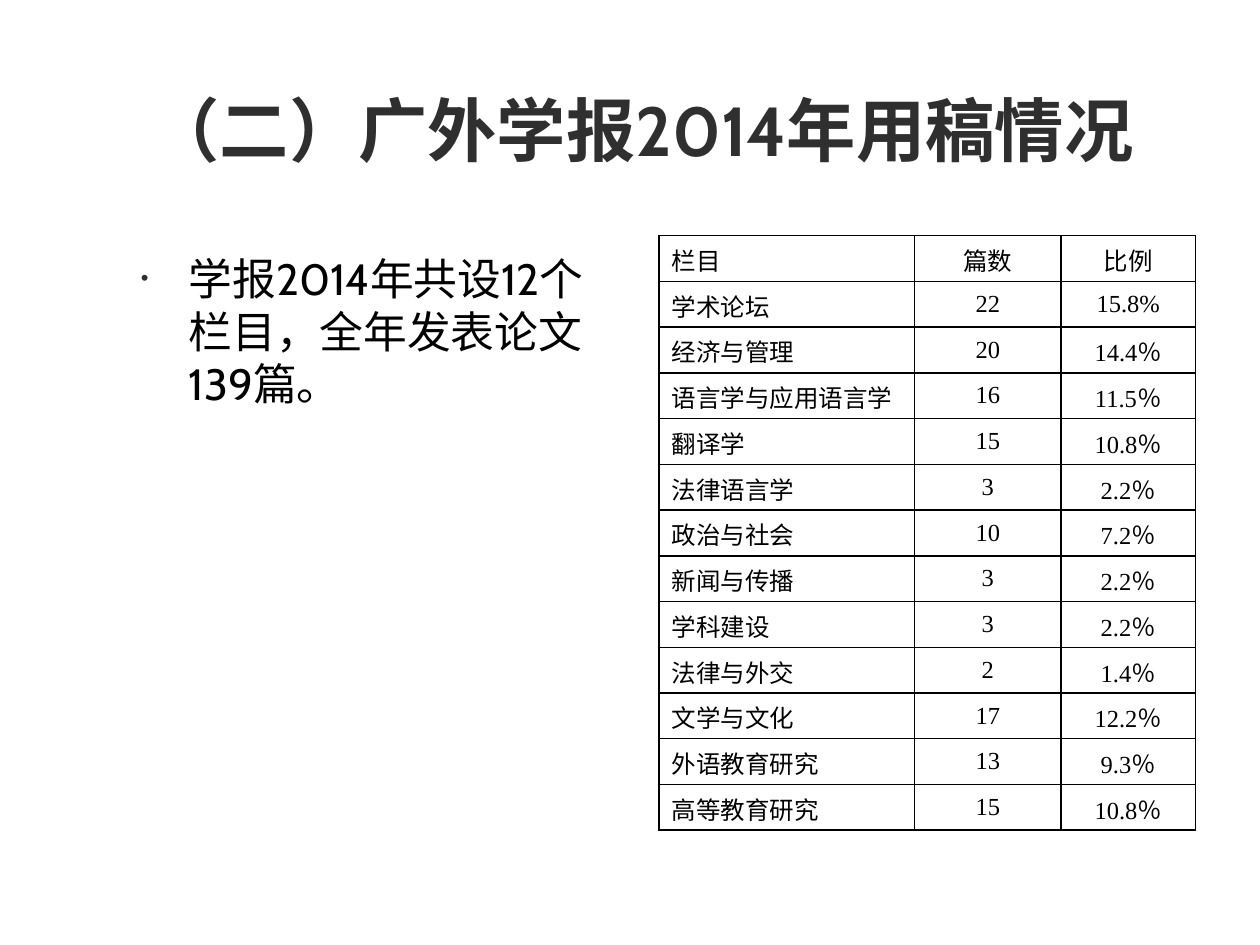
from dataclasses import dataclass

from lxml import etree
from pptx import Presentation
from pptx.dml.color import RGBColor
from pptx.enum.text import MSO_ANCHOR, PP_ALIGN
from pptx.oxml.ns import qn
from pptx.util import Inches, Pt

LEFT, CENTER = PP_ALIGN.LEFT, PP_ALIGN.CENTER
MIDDLE = MSO_ANCHOR.MIDDLE
COLORS = {"title": "2F2F2F", "text": "000000", "line": "000000"}
HANG = Inches(0.38)


@dataclass
class Style:
    size: float
    font: str
    color: str
    bold: bool = False


@dataclass
class Entry:
    name: str
    count: str
    share: str


TITLE = Style(39.6, "Cabin", "title", True)
BODY = Style(25, "Cabin", "text")
CELL = Style(14, "Times New Roman", "text")

ENTRIES = [
    Entry("栏目", "篇数", "比例"),
    Entry("学术论坛", "22", "15.8%"),
    Entry("经济与管理", "20", "14.4％"),
    Entry("语言学与应用语言学", "16", "11.5％"),
    Entry("翻译学", "15", "10.8％"),
    Entry("法律语言学", "3", "2.2％"),
    Entry("政治与社会", "10", "7.2％"),
    Entry("新闻与传播", "3", "2.2％"),
    Entry("学科建设", "3", "2.2％"),
    Entry("法律与外交", "2", "1.4％"),
    Entry("文学与文化", "17", "12.2％"),
    Entry("外语教育研究", "13", "9.3％"),
    Entry("高等教育研究", "15", "10.8％"),
]
WIDTHS = [2.03, 1.16, 1.07]
ALIGNS = [LEFT, CENTER, CENTER]


def place(shape, left: float, top: float, width: float, height: float) -> None:
    shape.left, shape.top = Inches(left), Inches(top)
    shape.width, shape.height = Inches(width), Inches(height)


def write(para, text: str, style: Style, align=LEFT) -> None:
    para.alignment = align
    run = para.add_run()
    run.text = text
    font = run.font
    font.size, font.name, font.bold = Pt(style.size), style.font, style.bold
    font.color.rgb = RGBColor.from_string(COLORS[style.color])


def hang(para) -> None:
    """Indent the paragraph and pull its first line back."""
    props = para._p.get_or_add_pPr()
    props.set("marL", str(HANG))
    props.set("indent", str(-HANG))


def add_bullet(para) -> None:
    props = para._p.get_or_add_pPr()
    color = etree.SubElement(props, qn("a:buClr"))
    etree.SubElement(color, qn("a:srgbClr"), val=COLORS["title"])
    etree.SubElement(props, qn("a:buSzPct"), val="50000")
    etree.SubElement(props, qn("a:buFont"), typeface="Arial")
    etree.SubElement(props, qn("a:buChar"), char="•")


def add_borders(cell) -> None:
    props = cell._tc.get_or_add_tcPr()
    for index, side in enumerate(("lnL", "lnR", "lnT", "lnB")):
        line = etree.Element(qn(f"a:{side}"), w=str(Pt(1)))
        fill = etree.SubElement(line, qn("a:solidFill"))
        etree.SubElement(fill, qn("a:srgbClr"), val=COLORS["line"])
        props.insert(index, line)


def add_body(slide) -> None:
    box = slide.shapes.add_textbox(0, 0, 0, 0)
    place(box, 1.02, 1.95, 3.98, 4.53)
    box.text_frame.word_wrap = True
    para = box.text_frame.paragraphs[0]
    write(para, "学报2014年共设12个栏目，全年发表论文139篇。", BODY)
    para.space_before = Pt(5)
    hang(para)
    add_bullet(para)


def add_grid(slide) -> None:
    frame = slide.shapes.add_table(
        len(ENTRIES), len(WIDTHS),
        Inches(5.23), Inches(1.87), Inches(sum(WIDTHS)), Inches(4.72))
    table = frame.table
    table.first_row = table.horz_banding = False
    for column, width in zip(table.columns, WIDTHS):
        column.width = Inches(width)
    for row, entry in zip(table.rows, ENTRIES):
        texts = (entry.name, entry.count, entry.share)
        for cell, text, align in zip(row.cells, texts, ALIGNS):
            cell.vertical_anchor = MIDDLE
            cell.fill.background()
            add_borders(cell)
            para = cell.text_frame.paragraphs[0]
            write(para, text, CELL, align)
            hang(para)


def main() -> None:
    deck = Presentation()
    deck.slide_width, deck.slide_height = Inches(10), Inches(7.5)
    slide = deck.slides.add_slide(deck.slide_layouts[5])
    title = slide.shapes.title
    place(title, 0.7, 0.47, 8.79, 1.11)
    title.text_frame.vertical_anchor = MIDDLE
    write(title.text_frame.paragraphs[0], "（二）广外学报2014年用稿情况", TITLE, CENTER)
    add_body(slide)
    add_grid(slide)
    deck.save("out.pptx")


if __name__ == "__main__":
    main()
